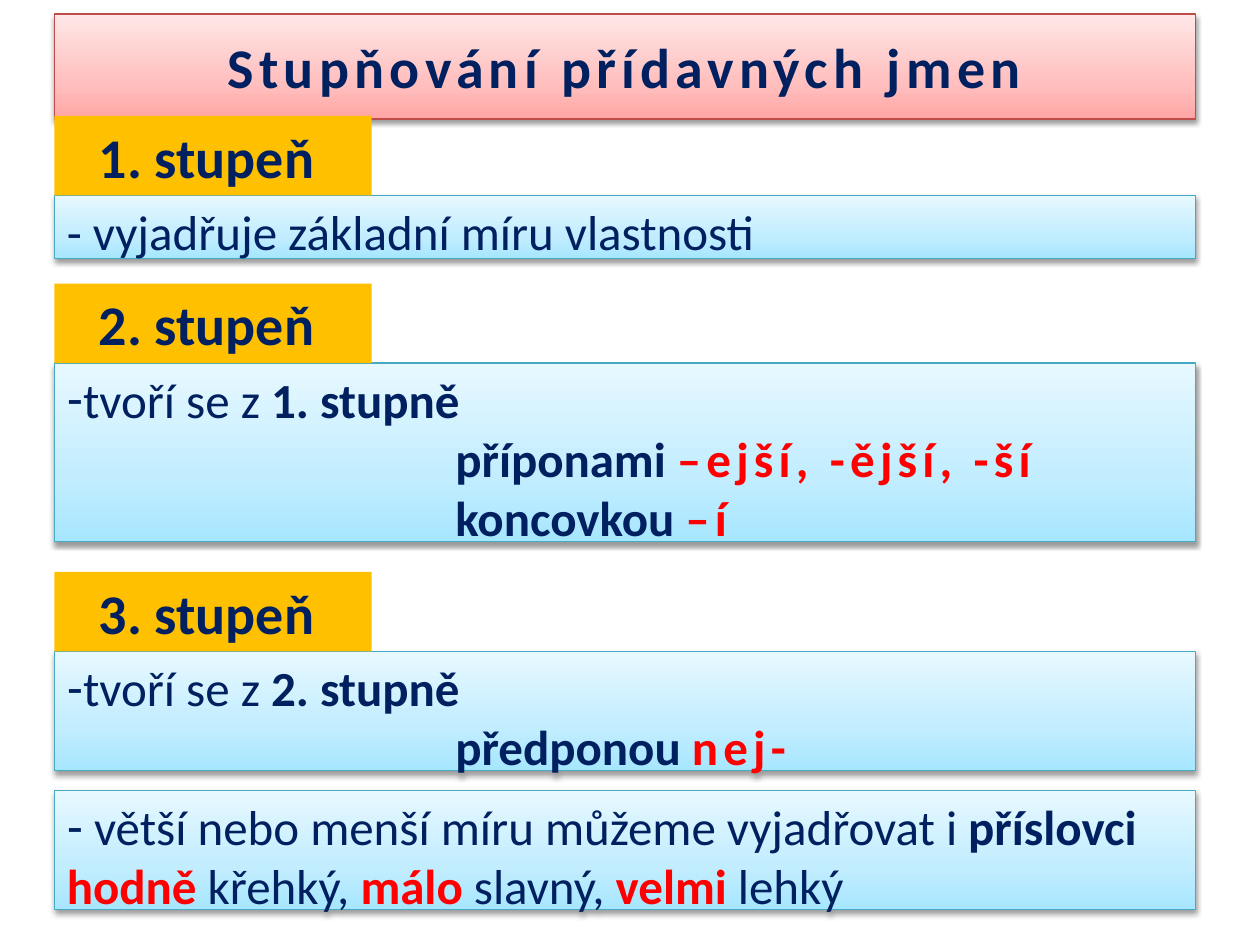
import copy

import lxml.etree
import pptx
import pptx.dml.color
import pptx.enum.shapes
import pptx.enum.text
import pptx.oxml
import pptx.oxml.ns
import pptx.util

Pt = pptx.util.Pt
RGBColor = pptx.dml.color.RGBColor
ANCHOR = pptx.enum.text.MSO_ANCHOR
ALIGN = pptx.enum.text.PP_ALIGN
qn = pptx.oxml.ns.qn

NAVY = RGBColor(0x00, 0x20, 0x60)
RED = RGBColor(0xFF, 0x00, 0x00)
AMBER = RGBColor(0xFF, 0xC0, 0x00)
PINK_LINE = RGBColor(0xBF, 0x4C, 0x48)
PINK_STOPS = (RGBColor(0xFF, 0xA6, 0xA5), RGBColor(0xFF, 0xC0, 0xBF), RGBColor(0xFF, 0xE7, 0xE7))
BLUE_LINE = RGBColor(0x46, 0xAA, 0xC5)
BLUE_STOPS = (RGBColor(0xA7, 0xE6, 0xFF), RGBColor(0xC1, 0xED, 0xFF), RGBColor(0xE7, 0xF8, 0xFF))
STOP_POSITIONS = (0, 0.35, 1)

LEFT, WIDTH = 31, 652
LABEL_WIDTH, LABEL_HEIGHT = 181.4, 45.5
LINE_HEIGHT, PADDING = 33.9, 7.2
INDENT = 222

PLAIN = (NAVY, False, 0)
BOLD = (NAVY, True, 0)
ACCENT = (RED, True, 0)
SPACED = (RED, True, 3)

LABELS = [("1. stupeň ", 66.2), ("2. stupeň ", 162), ("3. stupeň ", 326.8)]
PANELS = [
    (111.7, [(0, "", [("- vyjadřuje základní míru vlastnosti", PLAIN)])]),
    (207.5, [
        (0, "-", [("tvoří se z ", PLAIN), ("1. stupně", BOLD)]),
        (INDENT, "", [("příponami ", BOLD), ("–ejší, -ější, -ší", SPACED)]),
        (INDENT, "", [("koncovkou ", BOLD), ("–í", SPACED)]),
    ]),
    (372.3, [
        (0, "-", [("tvoří se z ", PLAIN), ("2. stupně", BOLD)]),
        (INDENT, "", [("předponou ", BOLD), ("nej-", SPACED)]),
    ]),
    (451.7, [
        (0, "-", [(" větší nebo menší míru můžeme vyjadřovat i ", PLAIN), ("příslovci", BOLD)]),
        (0, "", [("hodně", ACCENT), (" křehký, ", PLAIN), ("málo", ACCENT),
                 (" slavný, ", PLAIN), ("velmi", ACCENT), (" lehký", PLAIN)]),
    ]),
]


def place(box, left, top, width, height):
    box.left, box.top, box.width, box.height = Pt(left), Pt(top), Pt(width), Pt(height)


def set_frame(box, anchor):
    frame = box.text_frame
    frame.word_wrap = True
    frame.auto_size = pptx.enum.text.MSO_AUTO_SIZE.SHAPE_TO_FIT_TEXT
    frame.vertical_anchor = anchor
    return frame


def add_run(para, text, size, style):
    color, bold, spacing = style
    run = para.add_run()
    run.text = text
    run.font.name = "Calibri"
    run.font.size = Pt(size)
    run.font.bold = bold
    run.font.color.rgb = color
    if spacing:
        run._r.get_or_add_rPr().set("spc", str(spacing * 100))


def set_paragraph(para, indent, bullet):
    para.alignment = ALIGN.LEFT
    para.space_before = Pt(0)
    properties = para._p.get_or_add_pPr()
    properties.set("marL", str(Pt(indent)))
    properties.set("indent", "0")
    if bullet:
        lxml.etree.SubElement(properties, qn("a:buChar")).set("char", bullet)
    else:
        lxml.etree.SubElement(properties, qn("a:buNone"))


def style_card(box, stops, line_color):
    box.fill.gradient()
    box.fill.gradient_angle = 90
    stop_list = box._element.spPr.find(qn("a:gradFill")).find(qn("a:gsLst"))
    stop_list.append(copy.deepcopy(stop_list[0]))
    for stop, color, position in zip(box.fill.gradient_stops, stops, STOP_POSITIONS):
        stop.color.rgb = color
        stop.position = position
    box.line.color.rgb = line_color
    box.line.width = Pt(0.75)
    effects = lxml.etree.SubElement(box._element.spPr, qn("a:effectLst"))
    shadow = lxml.etree.SubElement(
        effects, qn("a:outerShdw"), blurRad=str(Pt(3.1)), dist=str(Pt(1.6)),
        dir="5400000", rotWithShape="0")
    black = lxml.etree.SubElement(shadow, qn("a:srgbClr"), val="000000")
    lxml.etree.SubElement(black, qn("a:alpha"), val="38000")


def fill_title(box, left, top, width, height):
    place(box, left, top, width, height)
    style_card(box, PINK_STOPS, PINK_LINE)
    para = set_frame(box, ANCHOR.MIDDLE).paragraphs[0]
    para.alignment = ALIGN.CENTER
    add_run(para, "Stupňování přídavných jmen", 32, (NAVY, True, 3))


def add_label(page, text, left, top, width, height):
    box = page.shapes.add_shape(
        pptx.enum.shapes.MSO_SHAPE.RECTANGLE, Pt(left), Pt(top), Pt(width), Pt(height))
    box.shadow.inherit = False
    box.fill.solid()
    box.fill.fore_color.rgb = AMBER
    box.line.fill.background()
    frame = set_frame(box, ANCHOR.MIDDLE)
    para = frame.paragraphs[0]
    para.alignment = ALIGN.CENTER
    add_run(para, text, 32, BOLD)


def fill_panel(box, rows, left, top, width):
    place(box, left, top, width, PADDING + LINE_HEIGHT * len(rows))
    style_card(box, BLUE_STOPS, BLUE_LINE)
    frame = set_frame(box, ANCHOR.TOP)
    for number, (indent, bullet, spans) in enumerate(rows):
        para = frame.add_paragraph() if number else frame.paragraphs[0]
        set_paragraph(para, indent, bullet)
        for text, style in spans:
            add_run(para, text, 28, style)


def main():
    deck = pptx.Presentation()
    deck.slide_width, deck.slide_height = Pt(720), Pt(540)
    page = deck.slides.add_slide(deck.slide_layouts.get_by_name("Comparison"))
    fill_title(page.shapes.title, LEFT, 15, WIDTH, 46)
    for text, top in LABELS:
        add_label(page, text, LEFT, top, LABEL_WIDTH, LABEL_HEIGHT)
    for number, (top, rows) in enumerate(PANELS, start=1):
        fill_panel(page.placeholders[number], rows, LEFT, top, WIDTH)
    deck.save("out.pptx")


if __name__ == "__main__":
    main()
